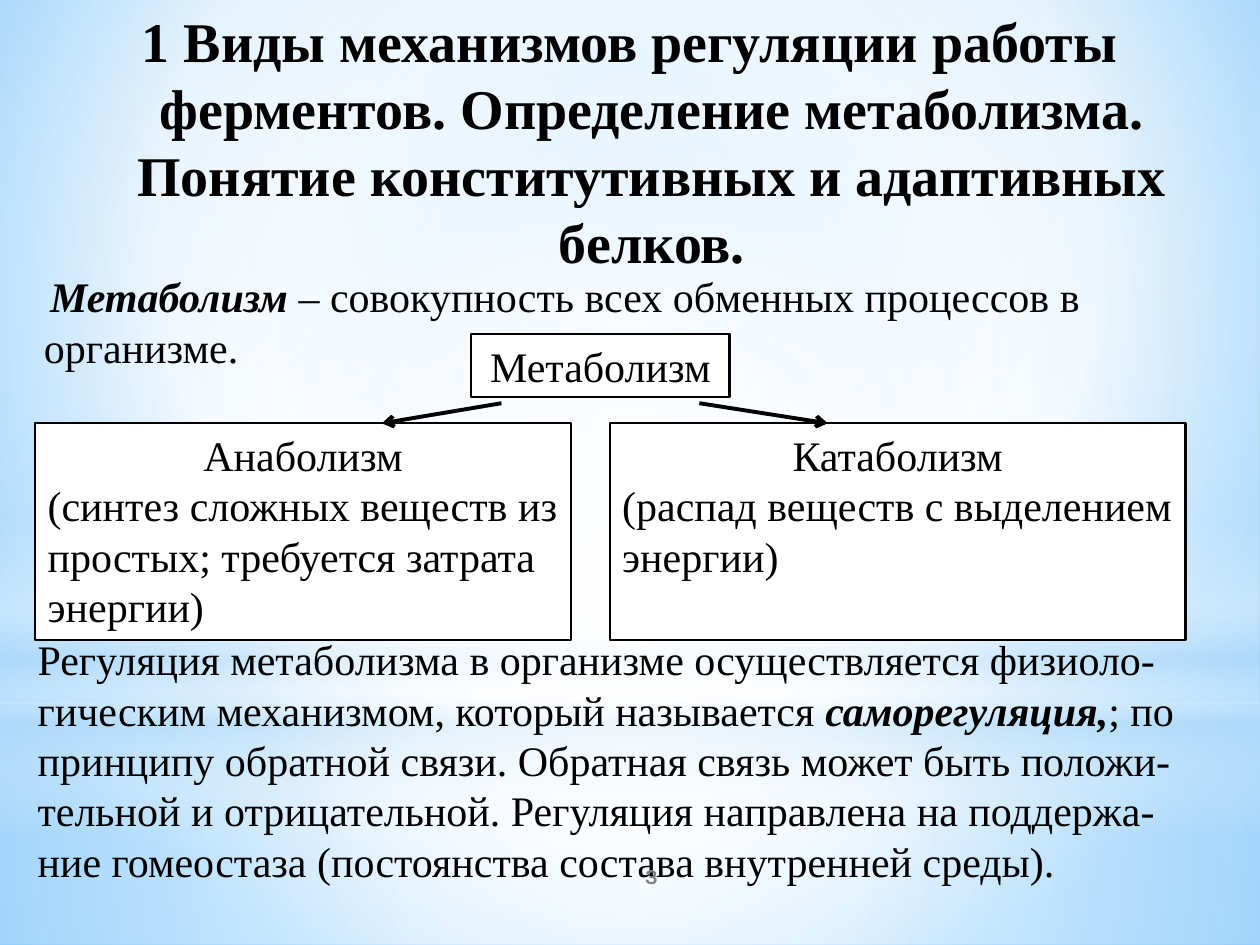
from lxml import etree
from pptx import Presentation
from pptx.dml.color import RGBColor
from pptx.enum.shapes import MSO_CONNECTOR, MSO_SHAPE
from pptx.enum.text import MSO_ANCHOR, PP_ALIGN
from pptx.oxml import parse_xml
from pptx.oxml.ns import nsdecls, qn
from pptx.util import Inches, Pt

RECTANGLE, OVAL = MSO_SHAPE.RECTANGLE, MSO_SHAPE.OVAL
STRAIGHT = MSO_CONNECTOR.STRAIGHT
LEFT, CENTER = PP_ALIGN.LEFT, PP_ALIGN.CENTER
TOP, MIDDLE = MSO_ANCHOR.TOP, MSO_ANCHOR.MIDDLE
SERIF = "Times New Roman"
BLACK, WHITE, SKY, GREY = "000000", "FFFFFF", "B4DCFA", "808080"
MIDPOINT = (50, 50, 50, 50)


def color(code):
    """Turn a hex string into a colour."""
    return RGBColor.from_string(code)


def gradient(stops, focus=None):
    """Build a gradient of (position, colour, opacity), circular or vertical."""
    marks = "".join(
        f'<a:gs pos="{position * 1000}"><a:srgbClr val="{code}">'
        f'<a:alpha val="{opacity * 1000}"/></a:srgbClr></a:gs>'
        for position, code, opacity in stops)
    course = '<a:lin ang="5400000" scaled="0"/>'
    if focus:
        sides = " ".join(f'{side}="{share * 1000}"' for side, share in zip("ltrb", focus))
        course = f'<a:path path="circle"><a:fillToRect {sides}/></a:path>'
    return parse_xml(f'<a:gradFill {nsdecls("a")} rotWithShape="1">'
                     f'<a:gsLst>{marks}</a:gsLst>{course}</a:gradFill>')


def set_gradient(fill, parent, stops, focus=None):
    """Give the fill held by parent a gradient."""
    fill.background()
    parent.replace(parent.find(qn("a:noFill")), gradient(stops, focus))


def add_panel(page, box, kind=RECTANGLE):
    """Add a plain shape without shadow."""
    panel = page.shapes.add_shape(kind, *map(Inches, box))
    panel.shadow.inherit = False
    return panel


def write(shape, paragraphs, size=24, font=SERIF, ink=BLACK, anchor=TOP, margin=0, indent=0):
    """Fill a shape with (alignment, [(text, bold, italic)]) paragraphs."""
    frame = shape.text_frame
    frame.word_wrap = True
    frame.vertical_anchor = anchor
    for index, (alignment, spans) in enumerate(paragraphs):
        para = frame.add_paragraph() if index else frame.paragraphs[0]
        para.alignment = alignment
        properties = para._p.get_or_add_pPr()
        properties.set("marL", str(Inches(margin)))
        properties.set("indent", str(Inches(indent)))
        for text, bold, italic in spans:
            span = para.add_run()
            span.text = text
            span.font.size, span.font.name = Pt(size), font
            span.font.bold, span.font.italic = bold, italic
            span.font.color.rgb = color(ink)


def add_text(page, box, paragraphs, **style):
    """Add a text box."""
    write(page.shapes.add_textbox(*map(Inches, box)), paragraphs, **style)


def add_card(page, box, heading, detail=None):
    """Add a framed white card with a centred heading."""
    card = add_panel(page, box)
    card.fill.solid()
    card.fill.fore_color.rgb = color(WHITE)
    card.line.color.rgb = color(BLACK)
    card.line.width = Pt(1.25)
    paragraphs = [(CENTER, [(heading, False, False)])]
    if detail:
        paragraphs.append((LEFT, [(detail, False, False)]))
    write(card, paragraphs)


def add_arrow(page, start, end):
    """Add a black arrow between two points."""
    arrow = page.shapes.add_connector(STRAIGHT, *map(Inches, start + end))
    arrow.line.color.rgb = color(BLACK)
    arrow.line.width = Pt(2.25)
    etree.SubElement(arrow.line._get_or_add_ln(), qn("a:tailEnd"), type="arrow")
    etree.SubElement(arrow._element.spPr, qn("a:effectLst"))


def add_backdrop(page, width, height):
    """Paint the background and its soft layers of light."""
    fill = page.background.fill
    fill.solid()
    holder = page.element.find(".//" + qn("p:bgPr"))
    set_gradient(fill, holder, [(0, "9ED5FF", 100), (60, WHITE, 100), (100, "5BB9FF", 100)],
                 (20, 10, 20, 60))
    horizon = 5.58
    layers = [
        (RECTANGLE, (0, horizon, width, height - horizon),
         [(0, WHITE, 91), (37, WHITE, 76), (100, SKY, 79)], MIDPOINT),
        (RECTANGLE, (0, 0, width, horizon),
         [(0, WHITE, 89), (48, WHITE, 62), (100, SKY, 79)], MIDPOINT),
        (RECTANGLE, (0, 4.12, width, 2.5),
         [(0, WHITE, 0), (29, WHITE, 30), (45, SKY, 40), (55, WHITE, 26),
          (65, SKY, 60), (100, WHITE, 0)], None),
        (OVAL, (0, 1.75, width, horizon), [(0, WHITE, 100), (56, WHITE, 0)], MIDPOINT),
    ]
    for kind, box, stops, focus in layers:
        layer = add_panel(page, box, kind)
        layer.line.fill.background()
        set_gradient(layer.fill, layer._element.spPr, stops, focus)


def add_scheme(page, left, top):
    """Draw metabolism splitting into its two branches."""
    add_card(page, (left + 3.46, top, 2.05, 0.5), "Метаболизм")
    branch_top = top + 0.71
    add_card(page, (left, branch_top, 4.25, 1.72), "Анаболизм",
             "(синтез сложных веществ из простых; требуется затрата энергии)")
    add_card(page, (left + 4.56, branch_top, 4.57, 1.72), "Катаболизм",
             "(распад веществ с выделением энергии)")
    for start, end in ((3.7, 2.75), (5.27, 6.29)):
        add_arrow(page, (left + start, top + 0.55), (left + end, branch_top))


def main():
    """Build the slide and save it."""
    deck = Presentation()
    width, height = 10, 7.5
    deck.slide_width, deck.slide_height = Inches(width), Inches(height)
    page = deck.slides.add_slide(deck.slide_layouts[6])
    add_backdrop(page, width, height)
    add_text(page, (0, 0, width, 1.25), [(CENTER, [(
        "1 Виды механизмов регуляции работы ферментов. Определение метаболизма. "
        "Понятие конститутивных и адаптивных белков.", True, False)])],
        size=32, margin=0.35, indent=-0.35)
    add_text(page, (0, 2.1, 9.37, 1.02), [(LEFT, [
        ("Метаболизм ", True, True),
        ("– совокупность всех обменных процессов в организме.", False, False)])],
        margin=0.25, indent=0.05)
    add_scheme(page, 0.28, 2.65)
    add_text(page, (0.2, 4.98, 9.37, 2.12), [(LEFT, [
        ("Регуляция метаболизма в организме осуществляется физиоло-гическим "
         "механизмом, который называется ", False, False),
        ("саморегуляция,", True, True),
        ("; по принципу обратной связи. Обратная связь может быть положи-тельной "
         "и отрицательной. Регуляция направлена на поддержа-ние гомеостаза "
         "(постоянства состава внутренней среды).", False, False)])])
    add_text(page, (4.17, 6.75, 2, 0.4), [(CENTER, [("3", True, False)])],
             size=12, font="Karla", ink=GREY, anchor=MIDDLE)
    deck.save("out.pptx")


if __name__ == "__main__":
    main()
